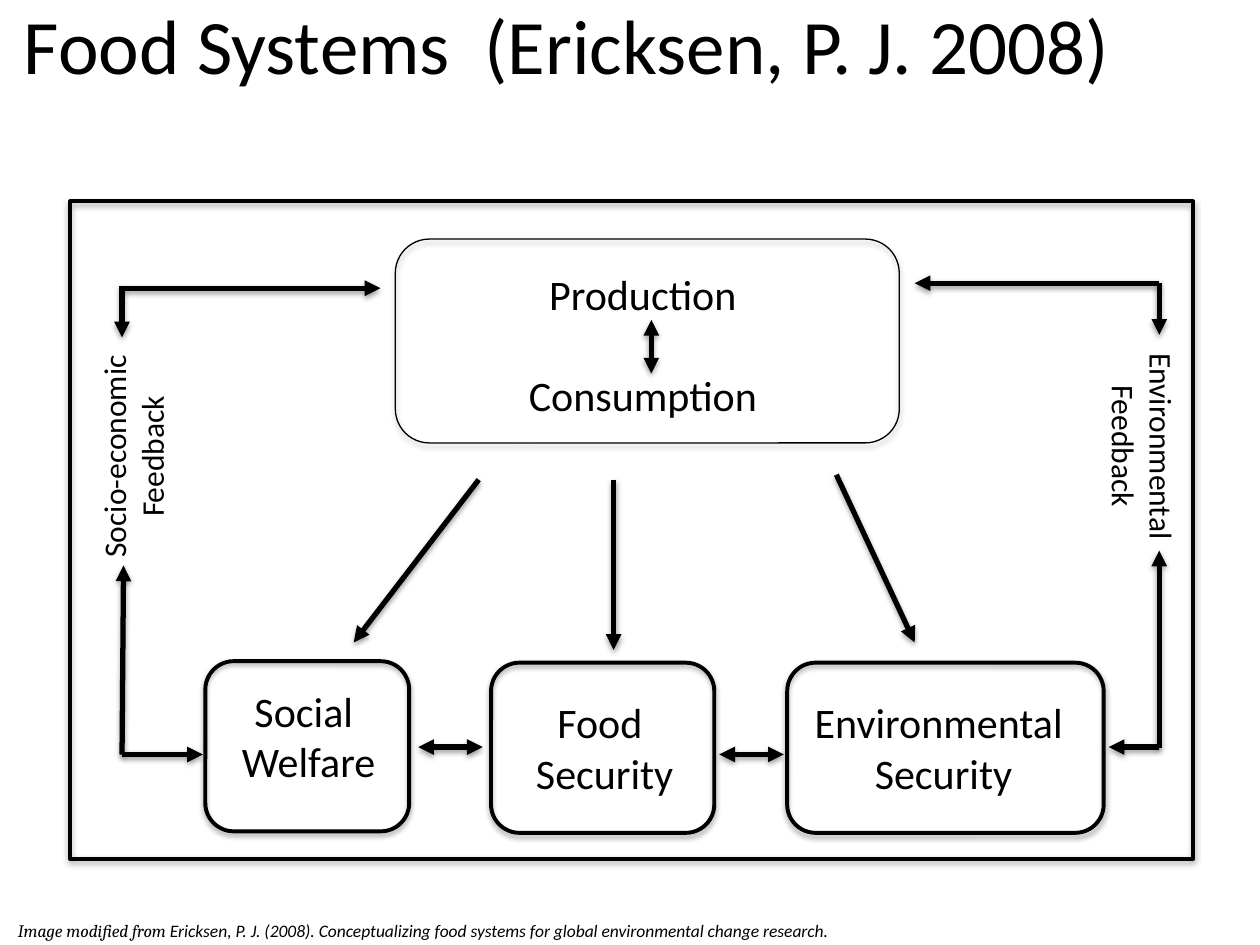
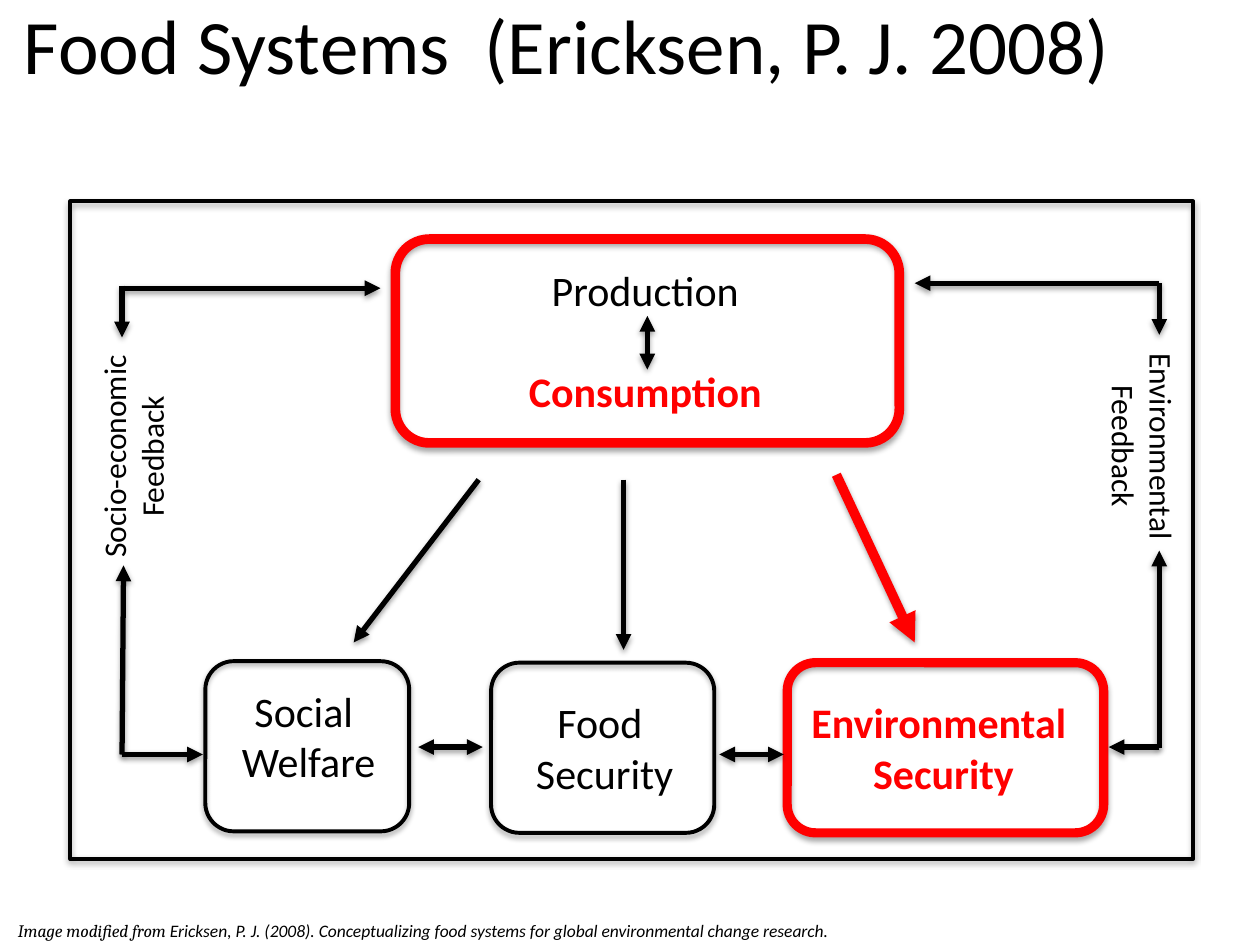
from collections import namedtuple

from lxml.etree import SubElement
from pptx import Presentation
from pptx.dml.color import RGBColor
from pptx.enum.shapes import MSO_CONNECTOR, MSO_SHAPE
from pptx.enum.text import MSO_ANCHOR, MSO_AUTO_SIZE, PP_ALIGN
from pptx.oxml.ns import qn
from pptx.util import Cm, Pt

COLOR = {"ink": "000000", "mark": "FF0000"}
SANS, SERIF = "Calibri", "Cambria"
LINE = 29.3  # height in points of one 24 pt line

Box = namedtuple("Box", "x y w h")
Look = namedtuple("Look", "tone bold core goal arrow text_x text_y mid_x food_x")

FRAME = Box(1.42, 4.06, 22.63, 13.26)
PLAIN = Look("ink", False, 0.75, 2.25, 3, 0.41, 0.46, 4.75, 10.95)
FOCUS = Look("mark", True, 5.5, 5.25, 5.5, 0.46, 0.38, 4.62, 11.15)


def inner(box, x, y, w, h):
    """Return a box whose place is given relative to another box."""
    return Box(box.x + x, box.y + y, w, h)


def cms(box):
    return [Cm(v) for v in box]


def ink(tone):
    return RGBColor.from_string(COLOR[tone])


def shade(item, alpha, dist):
    """Give a shape or line a soft shadow that falls straight down."""
    effects = SubElement(item.element.spPr, qn("a:effectLst"))
    outer = SubElement(effects, qn("a:outerShdw"), blurRad="40000",
                       dist=str(dist), dir="5400000", rotWithShape="0")
    color = SubElement(outer, qn("a:srgbClr"), val=COLOR["ink"])
    SubElement(color, qn("a:alpha"), val=str(alpha * 1000))


def panel(slide, box, width, tone="ink", kind=MSO_SHAPE.ROUNDED_RECTANGLE):
    shape = slide.shapes.add_shape(kind, *cms(box))
    shape.fill.background()
    shape.line.color.rgb = ink(tone)
    shape.line.width = Pt(width)
    shade(shape, 35, 23000)


def arrow(slide, box, ends, width=3, tone="ink", both=False):
    """Draw an arrow; ends are x1, y1, x2, y2 relative to the box."""
    x1, y1, x2, y2 = ends
    line = slide.shapes.add_connector(
        MSO_CONNECTOR.STRAIGHT, Cm(box.x + x1), Cm(box.y + y1),
        Cm(box.x + x2), Cm(box.y + y2))
    line.line.color.rgb = ink(tone)
    line.line.width = Pt(width)
    stroke = line.element.spPr.find(qn("a:ln"))
    for end in ["headEnd", "tailEnd"] if both else ["tailEnd"]:
        SubElement(stroke, qn("a:" + end), type="triangle")
    shade(line, 38, 20000)


def field(slide, box):
    """Add an empty text box that wraps."""
    item = slide.shapes.add_textbox(*cms(box))
    item.text_frame.word_wrap = True
    return item


def write(para, text, size, face=SANS, tone="ink", bold=False, slant=False):
    run = para.add_run()
    run.text = text
    font = run.font
    font.size, font.name = Pt(size), face
    font.bold, font.italic = bold, slant
    font.color.rgb = ink(tone)


def label(slide, box, lines, size=24, gap=0, turn=0):
    """Add centred lines, each a tuple of text, tone and bold."""
    item = field(slide, box)
    item.rotation = turn
    frame = item.text_frame
    frame.auto_size = MSO_AUTO_SIZE.SHAPE_TO_FIT_TEXT
    for i, (text, tone, bold) in enumerate(lines):
        para = frame.add_paragraph() if i else frame.paragraphs[0]
        para.alignment = PP_ALIGN.CENTER
        if i and gap:
            para.space_before = Pt(gap)
        write(para, text, size, tone=tone, bold=bold)


def title(slide, box):
    frame = field(slide, box).text_frame
    frame.vertical_anchor = MSO_ANCHOR.MIDDLE
    write(frame.paragraphs[0], "Food Systems  (Ericksen, P. J. 2008)", 44)


def credit(slide, box):
    frame = field(slide, box).text_frame
    frame.margin_left = frame.margin_right = Cm(0.18)
    frame.margin_top = frame.margin_bottom = Cm(0.1)
    para = frame.paragraphs[0]
    write(para, "Image modified from ", 10, SERIF, slant=True)
    write(para, "Ericksen, P. J. (2008). Conceptualizing food systems for "
                "global environmental change research.", 10, slant=True)


def core(slide, box, look):
    """Draw the production and consumption box."""
    panel(slide, box, look.core, look.tone)
    area = inner(box, look.text_x, look.text_y, 9.35, 3.33)
    label(slide, area, [("Production ", "ink", False),
                        ("Consumption ", look.tone, look.bold)], gap=LINE)
    arrow(slide, area, (look.mid_x, 1.17, look.mid_x, 2.25), both=True)


def goals(slide, box, look):
    """Draw the three outcomes and the arrows between them."""
    for x, y, w, dx, dy, tw, words, hot in (
            (8.48, 0.03, 4.5, -0.3, 0.56, 5.18, ("Food ", "Security"), False),
            (14.45, 0.03, 6.38, 0.05, 0.56, 6.2,
             ("Environmental ", "Security"), True),
            (2.72, 0, 4.11, -0.51, 0.36, 5.18, ("Social ", "Welfare"), False)):
        tone, bold, width = ((look.tone, look.bold, look.goal) if hot
                             else ("ink", False, 2.25))
        card = inner(box, x, y, w, 3.43)
        panel(slide, card, width, tone)
        label(slide, inner(card, dx, dy, tw, 2.34),
              [(word, tone, bold) for word in words])
    for ends in (7.01, 1.73, 8.31, 1.73), (13.08, 1.88, 14.38, 1.88):
        arrow(slide, box, ends, both=True)


def flows(slide, box, look):
    """Draw the arrows from the core down to the outcomes."""
    arrow(slide, box, (8.23, 0.1, 5.71, 3.38))
    arrow(slide, box, (15.44, 0, 17.02, 3.38), look.arrow, look.tone)
    arrow(slide, box, (look.food_x, 0.1, look.food_x, 3.53))


def loops(slide, box):
    """Draw the feedback loops on both sides."""
    for x, y, turn, word in ((19.28, 4.04, 90, "Environmental"),
                             (-1.07, 4.24, 270, "Socio-economic")):
        label(slide, inner(box, x, y, 4.67, 1.8),
              [(word + " Feedback", "ink", False)], 18, turn=turn)
    for ends in ((21.95, 1.65, 17.02, 1.65), (21.95, 1.65, 21.95, 2.69),
                 (21.95, 11.02, 21.95, 7.04), (21.95, 11, 20.93, 11),
                 (1.07, 1.75, 6.25, 1.75), (1.04, 1.7, 1.04, 2.74),
                 (1.04, 11.15, 2.67, 11.15), (1.04, 11.15, 1.07, 7.34)):
        arrow(slide, box, ends)


def page(deck, look):
    slide = deck.slides.add_slide(deck.slide_layouts[6])
    title(slide, Box(0.23, -0.71, 22.86, 3.18))
    panel(slide, FRAME, 2.25, kind=MSO_SHAPE.RECTANGLE)
    core(slide, inner(FRAME, 6.55, 0.76, 10.16, 4.11), look)
    goals(slide, inner(FRAME, 0, 9.27, FRAME.w, 3.46), look)
    flows(slide, inner(FRAME, 0, 5.51, FRAME.w, 3.53), look)
    loops(slide, FRAME)
    credit(slide, Box(0.18, 18.44, 25.12, 0.84))


def main():
    deck = Presentation()
    deck.slide_width, deck.slide_height = Cm(25.4), Cm(19.05)
    for look in PLAIN, FOCUS:
        page(deck, look)
    deck.save("out.pptx")


if __name__ == "__main__":
    main()
